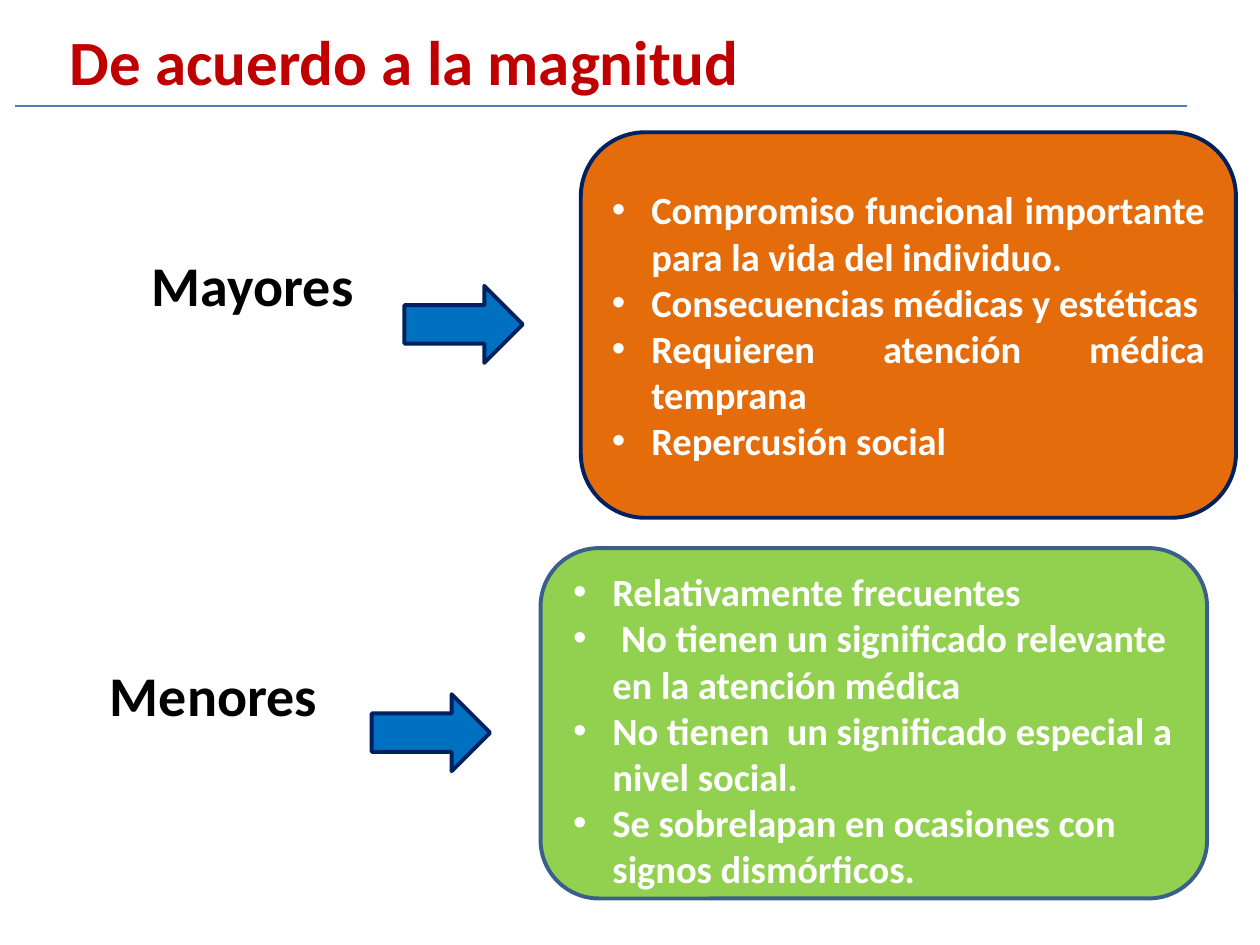
from dataclasses import dataclass

from pptx import Presentation
from pptx.dml.color import RGBColor
from pptx.enum.shapes import MSO_CONNECTOR, MSO_SHAPE
from pptx.enum.text import MSO_ANCHOR, PP_ALIGN
from pptx.oxml.ns import qn
from pptx.util import Pt


@dataclass(frozen=True)
class Theme:
    font: str = "Calibri"
    red: str = "C00000"
    black: str = "000000"
    white: str = "FFFFFF"
    orange: str = "E46C0A"
    green: str = "92D050"
    blue: str = "0070C0"
    navy: str = "002060"
    steel: str = "3A5F8C"
    rule: str = "4B7EBC"
    title_size: int = 36
    label_size: int = 32
    list_size: int = 22
    outline: float = 2.25
    indent: float = 22.5


theme = Theme()


def add_block(page, preset, position, fill, line):
    block = page.shapes.add_shape(preset, *map(Pt, position))
    block.shadow.inherit = False
    block.fill.solid()
    block.fill.fore_color.rgb = RGBColor.from_string(fill)
    block.line.color.rgb = RGBColor.from_string(line)
    block.line.width = Pt(theme.outline)
    return block


def write(box, lines, size, color, align, bullets=False):
    frame = box.text_frame
    frame.word_wrap = True
    frame.text = "\n".join(lines)
    for para in frame.paragraphs:
        para.alignment = align
        for span in para.runs:
            span.font.name = theme.font
            span.font.size = Pt(size)
            span.font.bold = True
            span.font.color.rgb = RGBColor.from_string(color)
        if bullets:
            properties = para._p.get_or_add_pPr()
            properties.set("marL", str(Pt(theme.indent)))
            properties.set("indent", str(-Pt(theme.indent)))
            bullet_font = properties.makeelement(qn("a:buFont"), {"typeface": "Arial"})
            bullet = properties.makeelement(qn("a:buChar"), {"char": "•"})
            properties.extend([bullet_font, bullet])


deck = Presentation()
deck.slide_width, deck.slide_height = Pt(720), Pt(540)
page = deck.slides.add_slide(deck.slide_layouts[6])

# Green panel behind the "Menores" list
add_block(page, MSO_SHAPE.ROUNDED_RECTANGLE, (308.9, 313.2, 380.9, 200.2),
          theme.green, theme.steel)

# Title and its rule
title = page.shapes.add_textbox(Pt(-4.3), Pt(9.4), Pt(470.9), Pt(51))
write(title, ["De acuerdo a la magnitud"], theme.title_size, theme.red, PP_ALIGN.CENTER)
rule = page.shapes.add_connector(MSO_CONNECTOR.STRAIGHT, Pt(8.6), Pt(60.5), Pt(678.2), Pt(60.5))
rule.line.color.rgb = RGBColor.from_string(theme.rule)
rule.line.width = Pt(0.75)
rule_properties = rule._element.spPr
rule_properties.append(rule_properties.makeelement(qn("a:effectLst"), {}))

# Orange panel with the "Mayores" list
mayores = add_block(page, MSO_SHAPE.ROUNDED_RECTANGLE, (331.9, 75.6, 374.4, 220.3),
                    theme.orange, theme.navy)
mayores.text_frame.vertical_anchor = MSO_ANCHOR.MIDDLE
write(mayores, [
    "Compromiso funcional importante para la vida del individuo.",
    "Consecuencias médicas y estéticas",
    "Requieren atención médica temprana",
    "Repercusión social",
], theme.list_size, theme.white, PP_ALIGN.JUSTIFY, bullets=True)

# Labels, each with its arrow
labels = [
    ("Mayores", (42.5, 139.7, 203.8, 46), (231.1, 163.4)),
    ("Menores", (54, 373.7, 136.1, 46), (212.4, 396.7)),
]
for name, label_position, arrow_corner in labels:
    label = page.shapes.add_textbox(*map(Pt, label_position))
    write(label, [name], theme.label_size, theme.black, PP_ALIGN.CENTER)
    add_block(page, MSO_SHAPE.RIGHT_ARROW, (*arrow_corner, 67.7, 44), theme.blue, theme.navy)

# "Menores" list
menores = page.shapes.add_textbox(Pt(320.4), Pt(321.1), Pt(357.8), Pt(193.7))
write(menores, [
    "Relativamente frecuentes",
    " No tienen un significado relevante en la atención médica",
    "No tienen  un significado especial a nivel social.",
    "Se sobrelapan en ocasiones con signos dismórficos.",
], theme.list_size, theme.white, PP_ALIGN.LEFT, bullets=True)

deck.save("out.pptx")
